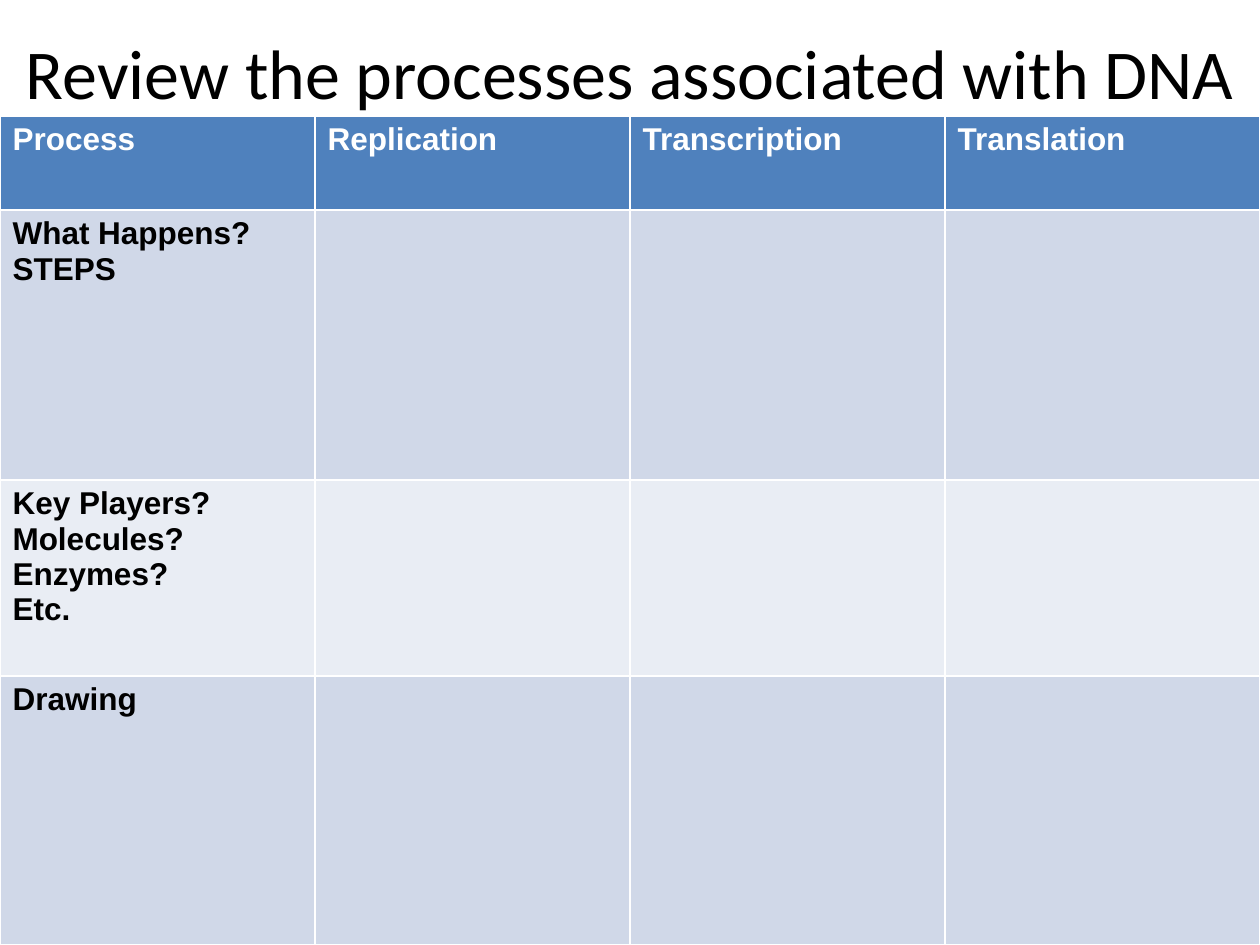
"""Build a worksheet slide comparing the processes associated with DNA."""
from dataclasses import dataclass

from pptx import Presentation
from pptx.dml.color import RGBColor
from pptx.enum.text import MSO_ANCHOR, PP_ALIGN
from pptx.util import Emu, Pt

MIDDLE = MSO_ANCHOR.MIDDLE
CENTER = PP_ALIGN.CENTER
BLACK = RGBColor(0x00, 0x00, 0x00)
WHITE = RGBColor(0xFF, 0xFF, 0xFF)
HEADER_BLUE = RGBColor(0x4F, 0x81, 0xBD)
BAND_DARK = RGBColor(0xD0, 0xD8, 0xE8)
BAND_LIGHT = RGBColor(0xE9, 0xED, 0xF4)
SLIDE_WIDTH, SLIDE_HEIGHT = 1260, 945
TITLE_TOP, TITLE_HEIGHT = -53, 248
TABLE_TOP = 116
COLUMN_COUNT = 4


@dataclass(frozen=True)
class Row:
    height: int
    fill: RGBColor
    color: RGBColor
    cells: tuple[tuple[str, ...], ...]


ROWS = (
    Row(94, HEADER_BLUE, WHITE,
        (("Process",), ("Replication",), ("Transcription",), ("Translation",))),
    Row(270, BAND_DARK, BLACK, (("What Happens?", "STEPS"),)),
    Row(196, BAND_LIGHT, BLACK, (("Key Players? Molecules? Enzymes?", "Etc."),)),
    Row(269, BAND_DARK, BLACK, (("Drawing",),)),
)


def px(length: int) -> Emu:
    return Emu(round(length * 914400 / 126))


def add_run(paragraph, text: str, font: str, size: int, color: RGBColor, bold: bool) -> None:
    run = paragraph.add_run()
    run.text = text
    run.font.name = font
    run.font.size = Pt(size)
    run.font.bold = bold
    run.font.color.rgb = color


def add_title(slide, text: str) -> None:
    shape = slide.shapes.add_textbox(0, px(TITLE_TOP), px(SLIDE_WIDTH), px(TITLE_HEIGHT))
    frame = shape.text_frame
    frame.word_wrap = True
    frame.vertical_anchor = MIDDLE
    paragraph = frame.paragraphs[0]
    paragraph.alignment = CENTER
    add_run(paragraph, text, "Calibri", 40, BLACK, False)


def fill_row(table, index: int, row: Row) -> None:
    table.rows[index].height = px(row.height)
    for column in range(COLUMN_COUNT):
        cell = table.cell(index, column)
        cell.fill.solid()
        cell.fill.fore_color.rgb = row.fill
    for column, lines in enumerate(row.cells):
        frame = table.cell(index, column).text_frame
        for number, line in enumerate(lines):
            paragraph = frame.add_paragraph() if number else frame.paragraphs[0]
            add_run(paragraph, line, "Arial", 18, row.color, True)


def add_process_table(slide, rows: tuple[Row, ...]) -> None:
    height = sum(row.height for row in rows)
    table = slide.shapes.add_table(
        len(rows), COLUMN_COUNT, 0, px(TABLE_TOP), px(SLIDE_WIDTH), px(height)
    ).table
    for index, row in enumerate(rows):
        fill_row(table, index, row)


def main() -> None:
    presentation = Presentation()
    presentation.slide_width = px(SLIDE_WIDTH)
    presentation.slide_height = px(SLIDE_HEIGHT)
    slide = presentation.slides.add_slide(presentation.slide_layouts[6])
    add_title(slide, "Review the processes associated with DNA")
    add_process_table(slide, ROWS)
    presentation.save("out.pptx")


if __name__ == "__main__":
    main()
